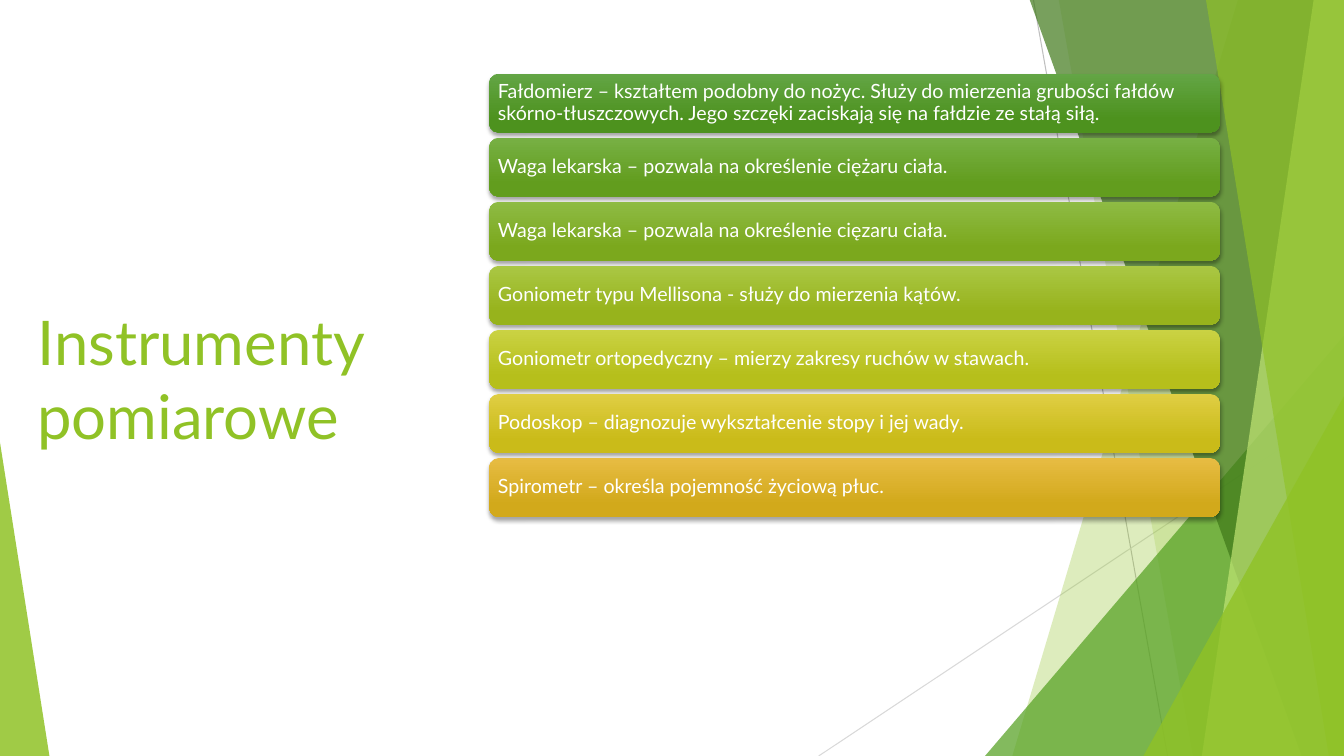
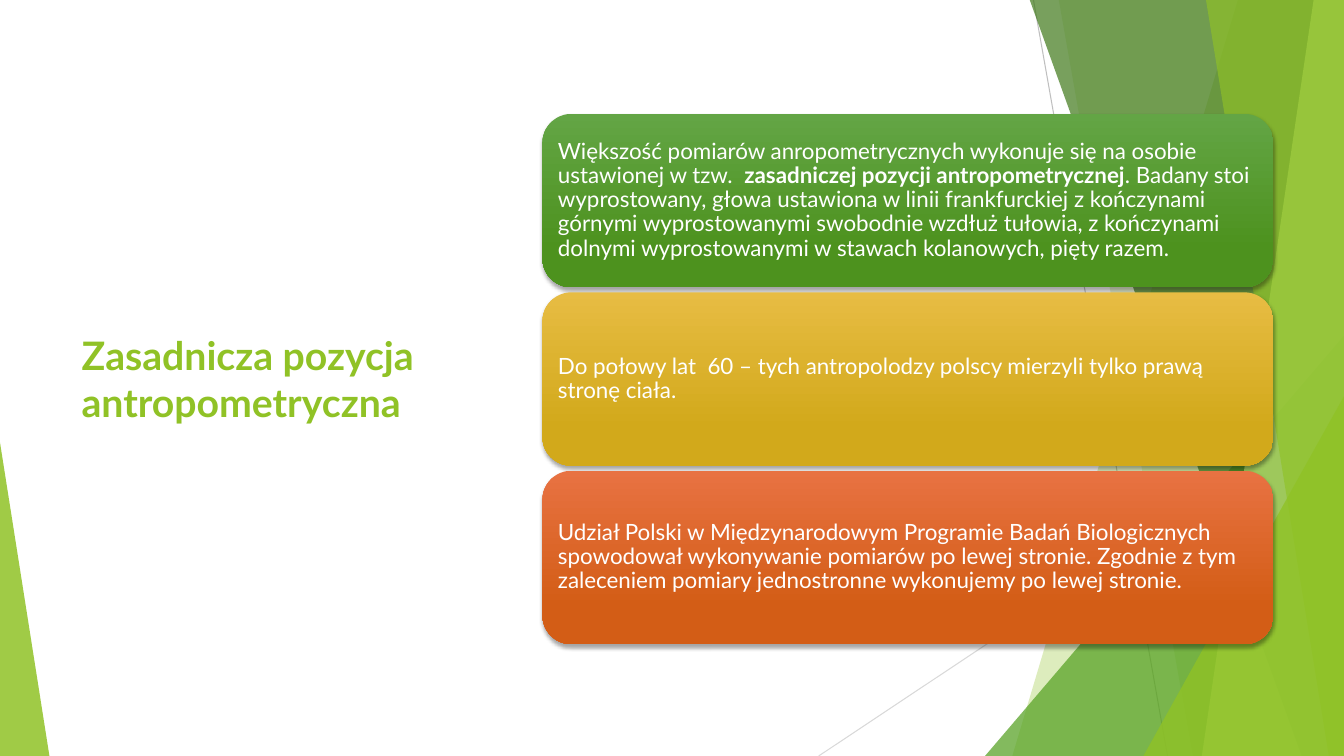
from lxml.etree import SubElement
from pptx import Presentation
from pptx.dml.color import RGBColor
from pptx.enum.shapes import MSO_CONNECTOR, MSO_SHAPE
from pptx.enum.text import MSO_ANCHOR, MSO_AUTO_SIZE, PP_ALIGN
from pptx.oxml.ns import qn
from pptx.util import Inches, Pt

FONT = "Lato"
LIME, GREEN, FOREST, PALE = "90C226", "54A021", "3F7819", "C0E474"
WHITE, GREY, LIGHT_GREY = "FFFFFF", "BFBFBF", "D9D9D9"
LEAF = ("63A545", "4D921E")
AMBER = ("E7BC43", "D2A91B")
ORANGE = ("E87242", "D35D16")
WIDTH, HEIGHT = 13.33, 7.5


def rgb(hex_color):
    return RGBColor.from_string(hex_color)


class Deck:
    def __init__(self):
        self.prs = Presentation()
        self.prs.slide_width = Inches(WIDTH)
        self.prs.slide_height = Inches(HEIGHT)
        self.layout = self.prs.slide_layouts[5]
        self.s = None

    def slide(self):
        self.s = self.prs.slides.add_slide(self.layout)

    def style(self, run, size, color, bold=False):
        run.font.name = FONT
        run.font.size = Pt(size)
        run.font.bold = bold
        run.font.color.rgb = rgb(color)

    def title(self, text, left, width, size, bold=False):
        sp = self.s.shapes.title
        sp.left, sp.top = Inches(left), Inches(1.51)
        sp.width, sp.height = Inches(width), Inches(4.48)
        tf = sp.text_frame
        tf.text = text
        tf.word_wrap = True
        tf.auto_size = MSO_AUTO_SIZE.NONE
        tf.vertical_anchor = MSO_ANCHOR.MIDDLE
        p = tf.paragraphs[0]
        p.alignment = PP_ALIGN.LEFT
        self.style(p.runs[0], size, LIME, bold)

    def line(self, x1, y1, x2, y2, color):
        ln = self.s.shapes.add_connector(
            MSO_CONNECTOR.STRAIGHT, Inches(x1), Inches(y1), Inches(x2), Inches(y2))
        ln.line.color.rgb = rgb(color)
        ln.line.width = Pt(0.75)
        SubElement(ln.element.spPr, qn("a:effectLst"))

    def paint(self, sp, color, opacity):
        sp.shadow.inherit = False
        sp.line.fill.background()
        sp.fill.solid()
        sp.fill.fore_color.rgb = rgb(color)
        clr = sp.element.spPr.find(qn("a:solidFill")).find(qn("a:srgbClr"))
        SubElement(clr, qn("a:alpha"), val=str(opacity * 1000))

    def band(self, top_x, bottom_x, color, opacity):
        top = -0.01
        fb = self.s.shapes.build_freeform(Inches(top_x), Inches(top))
        corners = [(WIDTH, top), (WIDTH, HEIGHT), (bottom_x, HEIGHT)]
        fb.add_line_segments([(Inches(x), Inches(y)) for x, y in corners])
        self.paint(fb.convert_to_shape(), color, opacity)

    def triangle(self, left, top, width, apex, color, opacity):
        sp = self.s.shapes.add_shape(
            MSO_SHAPE.ISOSCELES_TRIANGLE, Inches(left), Inches(top),
            Inches(width), Inches(HEIGHT - top))
        sp.adjustments[0] = apex
        self.paint(sp, color, opacity)

    def backdrop(self):
        self.line(10.25, 0, 11.58, HEIGHT, GREY)
        self.line(WIDTH, 4.03, 8.12, HEIGHT, LIGHT_GREY)
        self.band(12.28, 10.04, LIME, 30)
        self.band(10.5, 11.83, LIME, 20)
        self.triangle(9.77, 3.33, 3.56, 1, GREEN, 72)
        self.band(10.21, 12.91, FOREST, 70)
        self.band(13.03, 11.92, PALE, 70)
        self.band(11.96, 13.18, LIME, 65)
        self.triangle(11.34, 3.93, 1.99, 1, LIME, 80)
        self.triangle(0, 4.39, 0.49, 0, LIME, 85)
        decor = [sp for sp in self.s.shapes if not sp.is_placeholder]
        for i, sp in enumerate(decor):
            sp.element.xpath(".//p:cNvPr")[0].set("id", str(20 + i))
            self.layout.shapes.element.insert(2 + i, sp.element)

    def card(self, text, colors, left, top, height, size, inset):
        sp = self.s.shapes.add_shape(
            MSO_SHAPE.ROUNDED_RECTANGLE, Inches(left), Inches(top),
            Inches(7.25), Inches(height))
        sp.line.fill.background()
        sp.fill.gradient()
        sp.fill.gradient_angle = 270
        for stop, color, position in zip(sp.fill.gradient_stops, colors, (0, 0.78)):
            stop.color.rgb = rgb(color)
            stop.position = position
        sp.shadow.inherit = False
        effects = sp.element.spPr.find(qn("a:effectLst"))
        shadow = SubElement(effects, qn("a:outerShdw"), blurRad=str(Pt(3)),
                            dist=str(Pt(2)), dir="5400000", rotWithShape="0")
        clr = SubElement(shadow, qn("a:srgbClr"), val="000000")
        SubElement(clr, qn("a:alpha"), val="35000")
        tf = sp.text_frame
        tf.word_wrap = True
        tf.vertical_anchor = MSO_ANCHOR.MIDDLE
        tf.margin_left = tf.margin_right = Inches(inset)
        tf.margin_top = tf.margin_bottom = Inches(inset)
        p = tf.paragraphs[0]
        p.alignment = PP_ALIGN.LEFT
        p.line_spacing = 0.9
        for i, part in enumerate(text.split("*")):
            r = p.add_run()
            r.text = part
            self.style(r, size, WHITE, i % 2 == 1)

    def cards(self, items, left, top, bottom, size, inset):
        gap = 0.05
        pitch = (bottom - top + gap) / len(items)
        for i, (text, colors) in enumerate(items):
            self.card(text, colors, left, top + i * pitch, pitch - gap, size, inset)


INSTRUMENTS = [
    ("Fałdomierz – kształtem podobny do nożyc. Służy do mierzenia grubości fałdów "
     "skórno-tłuszczowych. Jego szczęki zaciskają się na fałdzie ze stałą siłą.", LEAF),
    ("Waga lekarska – pozwala na określenie ciężaru ciała.", ("77B044", "629D1E")),
    ("Waga lekarska – pozwala na określenie cięzaru ciała.", ("8EBB44", "7BA81D")),
    ("Goniometr typu Mellisona - służy do mierzenia kątów.", ("AAC744", "97B31C")),
    ("Goniometr ortopedyczny – mierzy zakresy ruchów w stawach.", ("CAD243", "B6BF1B")),
    ("Podoskop – diagnozuje wykształcenie stopy i jej wady.", ("DFCE43", "CABB19")),
    ("Spirometr – określa pojemność życiową płuc.", AMBER),
]

POSITION = [
    ("Większość pomiarów anropometrycznych wykonuje się na osobie ustawionej w tzw.  "
     "*zasadniczej pozycji antropometrycznej*. Badany stoi wyprostowany, głowa ustawiona "
     "w linii frankfurckiej z kończynami górnymi wyprostowanymi swobodnie wzdłuż tułowia, "
     "z kończynami dolnymi wyprostowanymi w stawach kolanowych, pięty razem.", LEAF),
    ("Do połowy lat  60 – tych antropolodzy polscy mierzyli tylko prawą stronę ciała.",
     AMBER),
    ("Udział Polski w Międzynarodowym Programie Badań Biologicznych spowodował "
     "wykonywanie pomiarów po lewej stronie. Zgodnie z tym zaleceniem pomiary "
     "jednostronne wykonujemy po lewej stronie.", ORANGE),
]


def main():
    deck = Deck()
    deck.slide()
    deck.backdrop()
    deck.title("Instrumenty pomiarowe", 0.27, 3.83, 44)
    deck.cards(INSTRUMENTS, 4.85, 0.73, 5.13, 14, 0.06)

    deck.slide()
    deck.title("Zasadnicza pozycja antropometryczna", 0.71, 3.88, 28, True)
    deck.cards(POSITION, 5.38, 1.13, 6.39, 16, 0.07)
    deck.prs.save("out.pptx")


if __name__ == "__main__":
    main()
